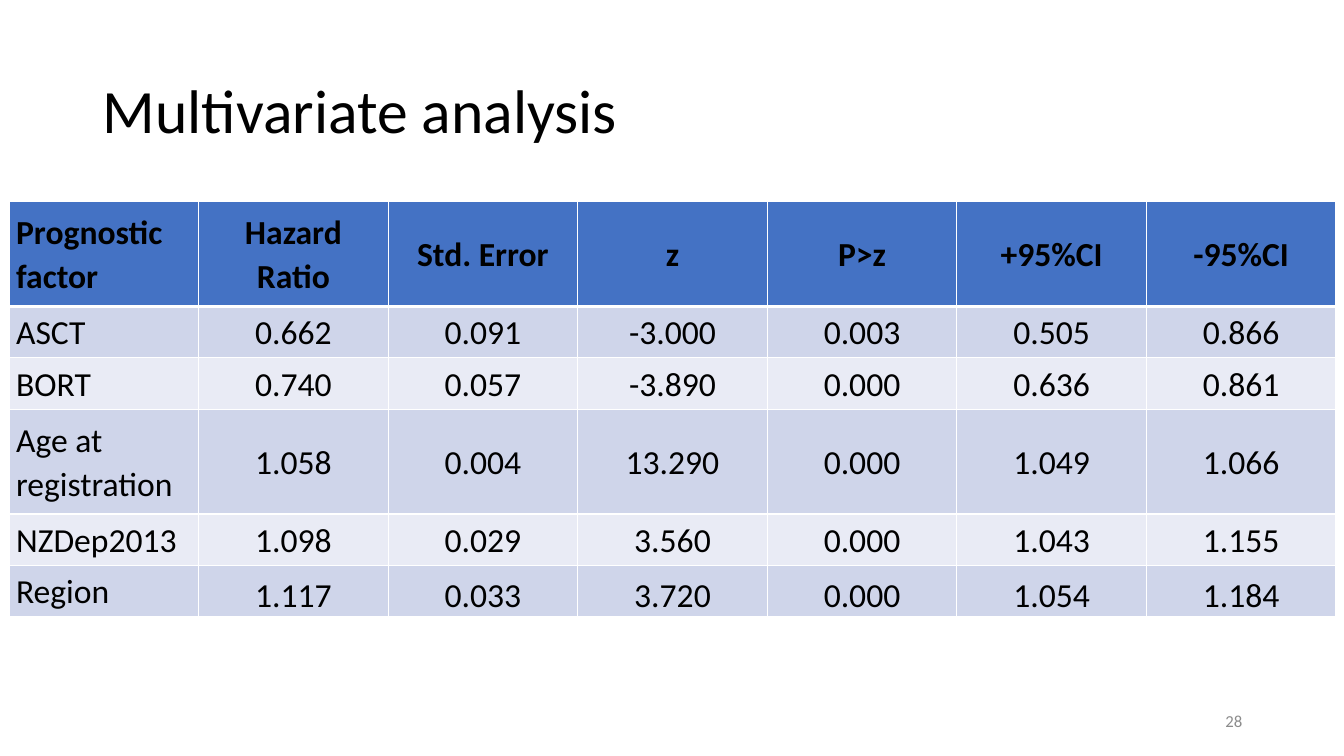
"""Build the slide with the multivariate analysis table."""
from lxml.etree import SubElement
from pptx import Presentation
from pptx.dml.color import RGBColor
from pptx.enum.text import MSO_ANCHOR, PP_ALIGN
from pptx.oxml.ns import qn
from pptx.util import Inches, Pt

TITLE = "Multivariate analysis"
PAGE_NUMBER = "28"
ROWS = [
    ("Prognostic factor", "Hazard Ratio", "Std. Error", "z", "P>z", "+95%CI", "-95%CI"),
    ("ASCT", "0.662", "0.091", "-3.000", "0.003", "0.505", "0.866"),
    ("BORT", "0.740", "0.057", "-3.890", "0.000", "0.636", "0.861"),
    ("Age at registration", "1.058", "0.004", "13.290", "0.000", "1.049", "1.066"),
    ("NZDep2013", "1.098", "0.029", "3.560", "0.000", "1.043", "1.155"),
    ("Region", "1.117", "0.033", "3.720", "0.000", "1.054", "1.184"),
]
TALL_ROWS = (0, 3)
TALL, SHORT = 1.04, 0.51
TABLE_LEFT, TABLE_TOP, COL_WIDTH = 0.09, 2, 1.88
COLORS = {"text": "000000", "header": "4472C4", "odd": "CFD5EA",
          "even": "E9EBF5", "border": "FFFFFF", "number": "8C8C8C"}
FONT = "Calibri"


def rgb(name):
    return RGBColor.from_string(COLORS[name])


def write(tf, text, size, color="text", align=PP_ALIGN.LEFT, spacing=None, bold=False):
    p = tf.paragraphs[0]
    p.alignment = align
    p.line_spacing = spacing
    r = p.add_run()
    r.text = text
    r.font.name = FONT
    r.font.size = Pt(size)
    r.font.bold = bold
    r.font.color.rgb = rgb(color)


def set_borders(cell, widths):
    tc_pr = cell._tc.get_or_add_tcPr()
    for side, width in widths.items():
        ln = SubElement(tc_pr, qn(f"a:ln{side}"), w=str(Pt(width)))
        fill = SubElement(ln, qn("a:solidFill"))
        SubElement(fill, qn("a:srgbClr"), val=COLORS["border"])


def add_title(s):
    title = s.shapes.title
    title.left, title.top = Inches(0.92), Inches(0.4)
    title.width, title.height = Inches(11.5), Inches(1.45)
    title.text_frame.vertical_anchor = MSO_ANCHOR.MIDDLE
    write(title.text_frame, TITLE, 44, spacing=0.9)


def add_results(s):
    heights = [TALL if i in TALL_ROWS else SHORT for i in range(len(ROWS))]
    cols = len(ROWS[0])
    table = s.shapes.add_table(
        len(ROWS), cols, Inches(TABLE_LEFT), Inches(TABLE_TOP),
        Inches(COL_WIDTH * cols), Inches(sum(heights))).table
    for col in table.columns:
        col.width = Inches(COL_WIDTH)
    for i, values in enumerate(ROWS):
        table.rows[i].height = Inches(heights[i])
        fill = "header" if i == 0 else "odd" if i % 2 else "even"
        for j, value in enumerate(values):
            cell = table.cell(i, j)
            cell.margin_left = cell.margin_right = Inches(0.07)
            cell.margin_top = cell.margin_bottom = 0
            low = i == len(ROWS) - 1 and j > 0
            cell.vertical_anchor = MSO_ANCHOR.BOTTOM if low else MSO_ANCHOR.MIDDLE
            set_borders(cell, {"L": 1, "R": 1, "T": 3 if i == 1 else 1,
                               "B": 3 if i == 0 else 1})
            cell.fill.solid()
            cell.fill.fore_color.rgb = rgb(fill)
            write(cell.text_frame, value, 24, spacing=1.07, bold=i == 0,
                  align=PP_ALIGN.CENTER if j else PP_ALIGN.LEFT)


def add_page_number(s):
    box = s.shapes.add_textbox(Inches(9.42), Inches(6.95), Inches(3), Inches(0.4))
    tf = box.text_frame
    tf.word_wrap = True
    tf.vertical_anchor = MSO_ANCHOR.MIDDLE
    write(tf, PAGE_NUMBER, 12, "number", PP_ALIGN.RIGHT)


def main():
    prs = Presentation()
    prs.slide_width, prs.slide_height = Inches(13.33), Inches(7.5)
    s = prs.slides.add_slide(prs.slide_layouts[5])
    add_title(s)
    add_results(s)
    add_page_number(s)
    prs.save("out.pptx")


if __name__ == "__main__":
    main()
